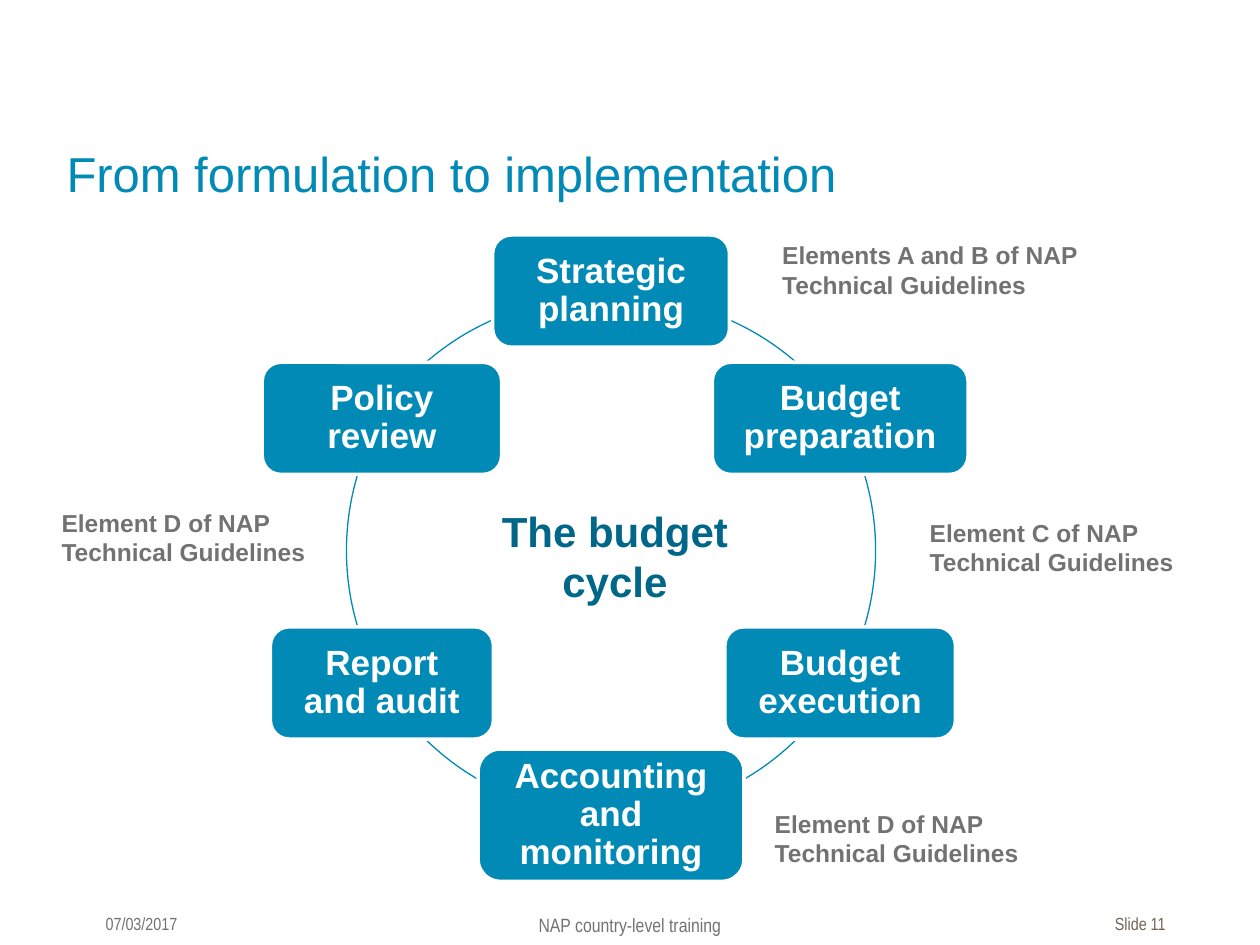
from math import cos, radians, sin

from pptx import Presentation
from pptx.dml.color import RGBColor
from pptx.enum.shapes import MSO_SHAPE
from pptx.enum.text import MSO_ANCHOR, PP_ALIGN
from pptx.util import Inches, Pt

LEFT, CENTER, RIGHT = PP_ALIGN.LEFT, PP_ALIGN.CENTER, PP_ALIGN.RIGHT
TOP, MIDDLE = MSO_ANCHOR.TOP, MSO_ANCHOR.MIDDLE
ROUNDED, ARC = MSO_SHAPE.ROUNDED_RECTANGLE, MSO_SHAPE.ARC

COLORS = {"blue": "008AB5", "navy": "006788", "gray": "727272",
          "brown": "6E6452", "white": "FFFFFF"}

WIDTH, HEIGHT = 10, 7.5
RING_X, RING_Y, RADIUS = 4.85, 4.37, 2.1
FOOTER_TOP, FOOTER_HEIGHT = 0.96 * HEIGHT, 0.27
GUIDE_HEIGHT = 0.57

# Clockwise from the top: text, width, height, shift down from the ring
STAGES = [
    ("Strategic planning", 1.88, 0.89, 0.04),
    ("Budget preparation", 2.03, 0.89, 0),
    ("Budget execution", 1.83, 0.89, 0),
    ("Accounting and monitoring", 2.11, 1.05, 0),
    ("Report and audit", 1.77, 0.89, 0),
    ("Policy review", 1.9, 0.89, 0),
]

# Right-hand arcs, mirrored to the left: start and end in degrees
# clockwise from east, then shift of the circle's centre
ARCS = [
    (293.9, 311, 0.09, 0.09),
    (343.6, 16.4, 0, 0),
    (45.6, 59.8, 0, 0),
]

# Text, left, top, width
GUIDES = [
    ("Elements A and B of NAP Technical Guidelines", 6.11, 1.86, 3.07),
    ("Element C of NAP Technical Guidelines", 7.28, 4.06, 2.72),
    ("Element D of NAP Technical Guidelines", 6.05, 6.37, 2.65),
    ("Element D of NAP Technical Guidelines", 0.39, 3.98, 2.56),
]

# Text, left, width, size, colour, alignment, right inset
FOOTERS = [
    ("07/03/2017", 0.74, 1.42, 10, "gray", LEFT, 0.1),
    ("NAP country-level training", 3.13, 3.74, 11, "gray", CENTER, 0.1),
    ("Slide 11", 8.24, 1.01, 10, "brown", RIGHT, 0),
]


def rgb(name):
    return RGBColor.from_string(COLORS[name])


def write(shape, text, size, color, bold=False, align=LEFT, anchor=TOP,
          font="Arial"):
    frame = shape.text_frame
    frame.word_wrap = True
    frame.vertical_anchor = anchor
    paragraph = frame.paragraphs[0]
    paragraph.text = text
    paragraph.alignment = align
    paragraph.font.name = font
    paragraph.font.size = Pt(size)
    paragraph.font.bold = bold
    paragraph.font.color.rgb = rgb(color)
    return frame


def add_text(slide, text, left, top, width, height, size, color, **style):
    box = slide.shapes.add_textbox(*map(Inches, (left, top, width, height)))
    return write(box, text, size, color, **style)


def add_centered(slide, kind, x, y, width, height, line_color, line_width):
    """Add a preset shape around the centre x, y."""
    box = (x - width / 2, y - height / 2, width, height)
    shape = slide.shapes.add_shape(kind, *map(Inches, box))
    shape.shadow.inherit = False
    shape.line.color.rgb = rgb(line_color)
    shape.line.width = Pt(line_width)
    return shape


def add_arc(slide, start, end, dx, dy):
    arc = add_centered(slide, ARC, RING_X + dx, RING_Y + dy,
                       2 * RADIUS, 2 * RADIUS, "blue", 0.75)
    arc.fill.background()
    # One degree is 60000 units, one adjustment step 100000 units
    for i, angle in enumerate((start, end)):
        arc.adjustments[i] = angle % 360 * 0.6


def add_stage(slide, index, text, width, height, dy):
    angle = radians(360 / len(STAGES) * index - 90)
    stage = add_centered(slide, ROUNDED, RING_X + RADIUS * cos(angle),
                         RING_Y + RADIUS * sin(angle) + dy,
                         width, height, "white", 2)
    stage.fill.solid()
    stage.fill.fore_color.rgb = rgb("blue")
    frame = write(stage, text, 20, "white", bold=True, align=CENTER,
                  anchor=MIDDLE)
    frame.margin_left = frame.margin_right = Inches(0.12)
    frame.paragraphs[0].line_spacing = 0.9


def main():
    presentation = Presentation()
    presentation.slide_width = Inches(WIDTH)
    presentation.slide_height = Inches(HEIGHT)
    slide = presentation.slides.add_slide(presentation.slide_layouts[6])

    add_text(slide, "From formulation to implementation",
             0.43, 1.03, 8.5, 0.68, 28, "blue", anchor=MIDDLE)
    for start, end, dx, dy in ARCS:
        add_arc(slide, start, end, dx, dy)
        add_arc(slide, 180 - end, 180 - start, -dx, dy)
    for index, stage in enumerate(STAGES):
        add_stage(slide, index, *stage)
    for text, left, top, width in GUIDES:
        add_text(slide, text, left, top, width, GUIDE_HEIGHT, 14, "gray",
                 bold=True)
    add_text(slide, "The budget cycle", 3.74, 3.96, 2.28, 0.91, 24, "navy",
             bold=True, align=CENTER)
    for text, left, width, size, color, align, inset in FOOTERS:
        frame = add_text(slide, text, left, FOOTER_TOP, width, FOOTER_HEIGHT,
                         size, color, align=align, font="Arial Narrow")
        frame.margin_right = Inches(inset)

    presentation.save("out.pptx")


if __name__ == "__main__":
    main()
